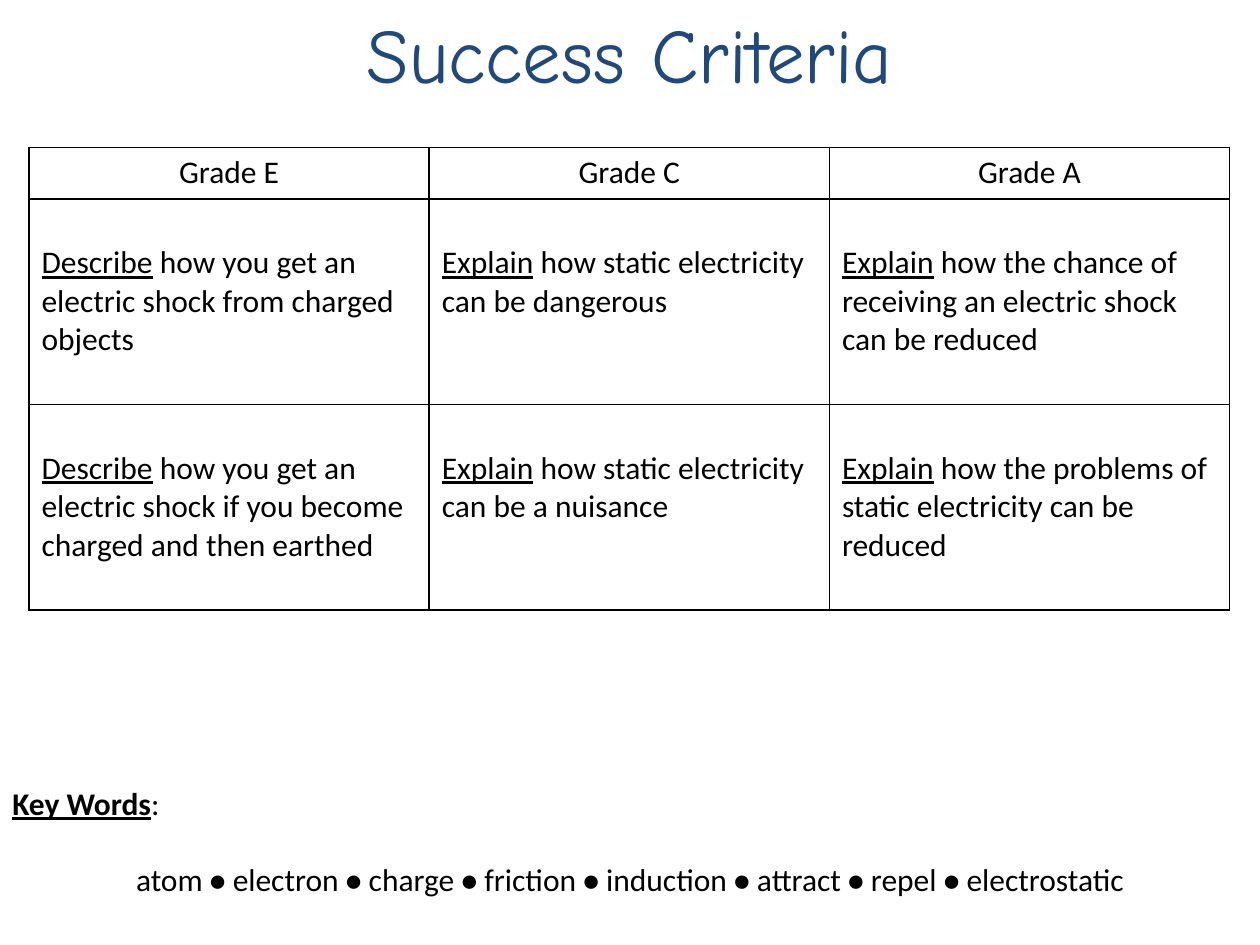
"""Build a slide of graded success criteria with a line of key words."""
import pptx
import pptx.util
import pptx.dml.color
import pptx.enum.text
import pptx.oxml
import pptx.oxml.ns

WIDE, HIGH = 10, 7.5
INCH = pptx.util.Inches
MID = pptx.enum.text.PP_ALIGN.CENTER
BODY = {"name": "Calibri", "size": pptx.util.Pt(18)}
HEAD = {"name": "Comic Neue", "size": pptx.util.Pt(44)}
LINE = 0.305
GRADES = ["Grade E", "Grade C", "Grade A"]
GOALS = [
    [("Describe", " how you get an electric shock from charged objects"),
     ("Explain", " how static electricity can be dangerous"),
     ("Explain", " how the chance of receiving an electric shock can be reduced")],
    [("Describe", " how you get an electric shock if you become charged and then earthed"),
     ("Explain", " how static electricity can be a nuisance"),
     ("Explain", " how the problems of static electricity can be reduced")],
]
WORDS = ["atom", "electron", "charge", "friction", "induction",
         "attract", "repel", "electrostatic"]


def tint(color, code):
    """Set a color object from a hex string."""
    color.rgb = pptx.dml.color.RGBColor.from_string(code)


def write(para, text, code="000000", **look):
    """Add a run with the given font values."""
    run = para.add_run()
    run.text = text
    for key, value in look.items():
        setattr(run.font, key, value)
    tint(run.font.color, code)


def frame(slide, left, top, width, height):
    """Add a wrapping text box, placed by shares of the slide."""
    box = slide.shapes.add_textbox(INCH(left * WIDE), INCH(top * HIGH),
                                   INCH(width * WIDE), INCH(height * HIGH))
    box.text_frame.word_wrap = True
    return box.text_frame


def edge(cell):
    """Draw thin black borders around a cell without fill."""
    props = cell._tc.get_or_add_tcPr()
    for side in ("lnL", "lnR", "lnT", "lnB"):
        props.append(pptx.oxml.parse_xml(
            f'<a:{side} {pptx.oxml.ns.nsdecls("a")} w="12700"><a:solidFill>'
            f'<a:srgbClr val="000000"/></a:solidFill></a:{side}>'))
    cell.fill.background()


def grid(slide, left, top, width, rows):
    """Add the table of grades and goals."""
    shape = slide.shapes.add_table(len(rows), len(GRADES), INCH(left), INCH(top),
                                   INCH(width), INCH(sum(rows)))
    table = shape.table
    for row, high in zip(table.rows, rows):
        row.height = INCH(high)
    for col, grade in enumerate(GRADES):
        table.columns[col].width = INCH(width / len(GRADES))
        cell = table.cell(0, col)
        edge(cell)
        para = cell.text_frame.paragraphs[0]
        para.alignment = MID
        write(para, grade, **BODY)
        for row, goals in enumerate(GOALS, 1):
            cell = table.cell(row, col)
            edge(cell)
            cell.margin_top = INCH(0.05 + LINE)
            para = cell.text_frame.paragraphs[0]
            verb, rest = goals[col]
            write(para, verb, underline=True, **BODY)
            write(para, rest, **BODY)


def terms(slide):
    """Add the key words under their label."""
    text = frame(slide, 0, 0.823, 1, 0.135)
    para = text.paragraphs[0]
    write(para, "Key Words", bold=True, underline=True, **BODY)
    write(para, ":", **BODY)
    para = text.add_paragraph()
    para.alignment = MID
    para.space_before = INCH(LINE)
    for spot, word in enumerate(WORDS):
        if spot:
            write(para, " • ", bold=True, **BODY)
        write(para, word, **BODY)


def main():
    """Build and save the slide."""
    deck = pptx.Presentation()
    deck.slide_width, deck.slide_height = INCH(WIDE), INCH(HIGH)
    slide = deck.slides.add_slide(deck.slide_layouts[6])
    para = frame(slide, 0.05, 0, 0.9, 0.167).paragraphs[0]
    para.alignment = MID
    write(para, "Success Criteria", "1F497D", **HEAD)
    grid(slide, 0.23, 1.17, 9.53, [0.41, 1.63, 1.63])
    terms(slide)
    deck.save("out.pptx")


if __name__ == "__main__":
    main()
